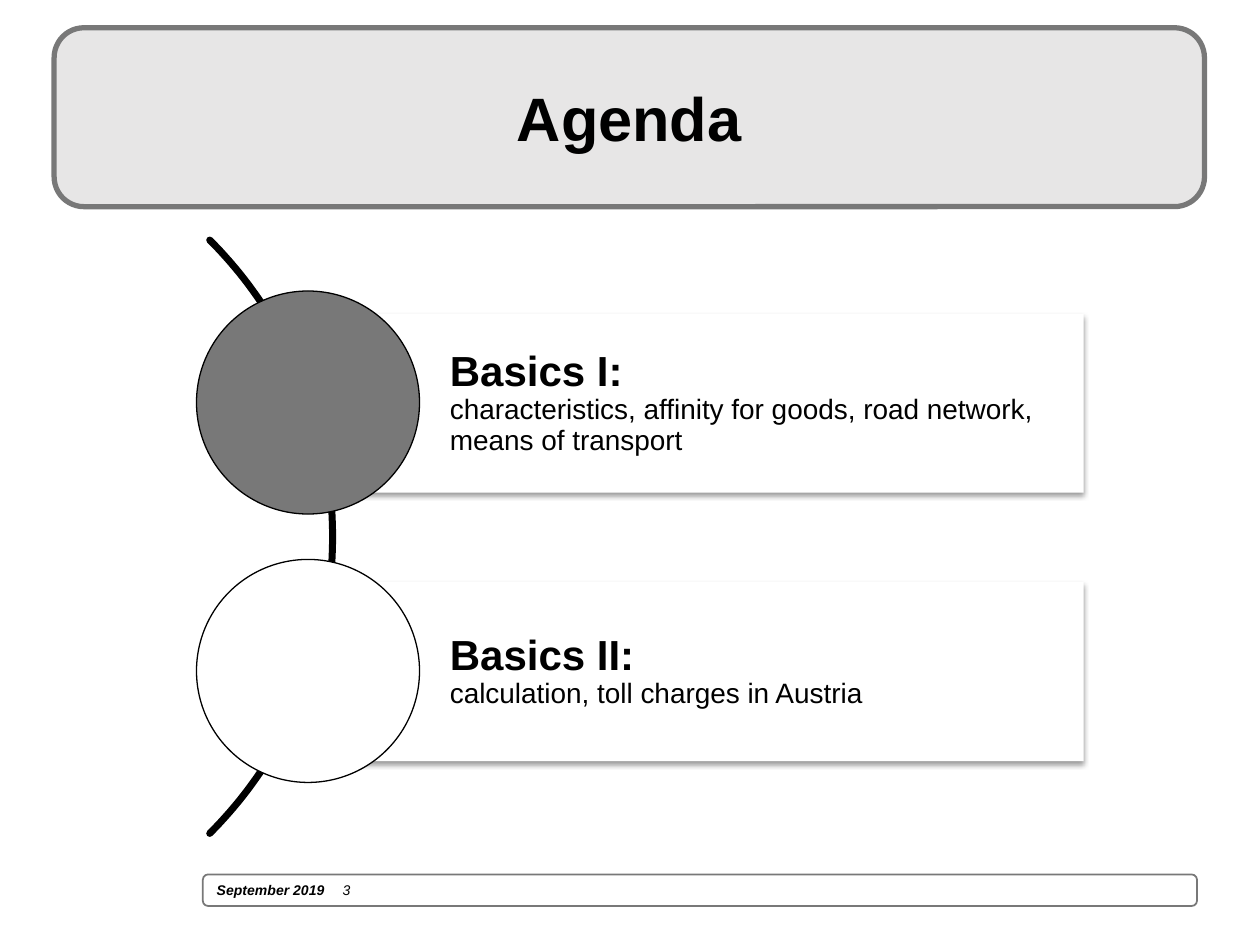
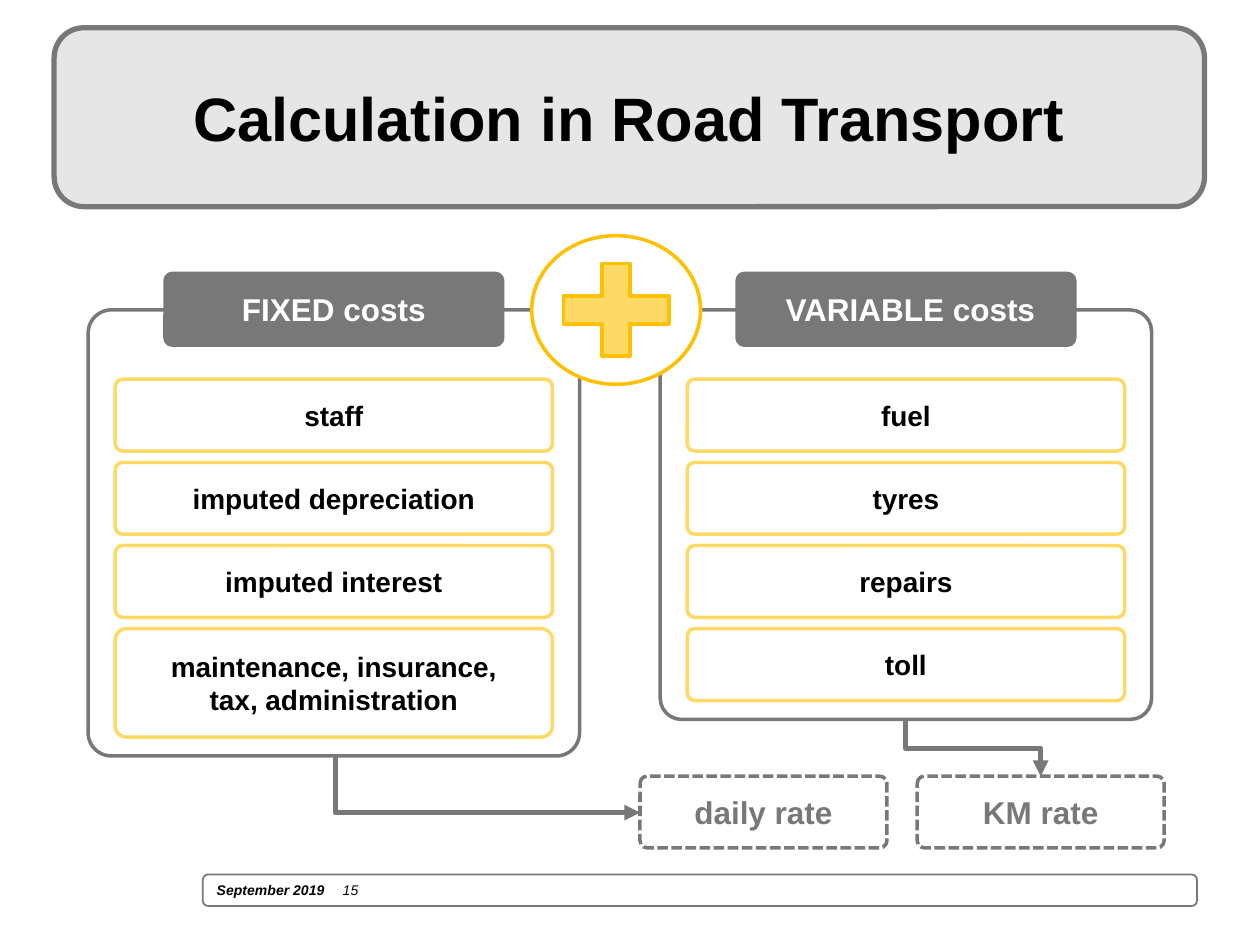
from dataclasses import dataclass
from math import cos, radians, sin

from lxml.etree import SubElement
from pptx import Presentation
from pptx.dml.color import RGBColor
from pptx.enum.dml import MSO_LINE
from pptx.enum.shapes import MSO_CONNECTOR, MSO_SHAPE
from pptx.enum.text import MSO_ANCHOR, PP_ALIGN
from pptx.oxml.ns import qn
from pptx.shapes.autoshape import Shape
from pptx.slide import Slide
from pptx.text.text import _Paragraph as Paragraph
from pptx.util import Inches, Pt


@dataclass(frozen=True)
class Theme:
    font: str = "Arial"
    black: str = "000000"
    white: str = "FFFFFF"
    grey: str = "787878"
    light_grey: str = "E7E6E6"
    yellow: str = "FFD966"
    gold: str = "FFC000"
    title_size: int = 35
    topic_size: int = 24
    label_size: int = 18
    body_size: int = 16
    footer_size: int = 8


THEME = Theme()


@dataclass(frozen=True)
class Frame:
    left: float
    top: float
    width: float
    height: float


@dataclass(frozen=True)
class Topic:
    heading: str
    detail: str
    dot_color: str


@dataclass(frozen=True)
class CostColumn:
    left: float
    height: float
    heading: str
    items: tuple[str, ...]
    last_height: float
    heading_inset: float = 0.1


TOPICS = (
    Topic("Basics I:", "characteristics, affinity for goods, road network, means of transport",
          THEME.grey),
    Topic("Basics II:", "calculation, toll charges in Austria", THEME.white),
)
COLUMNS = (
    CostColumn(0.7, 3.54, "FIXED costs",
               ("staff", "imputed depreciation", "imputed interest",
                "maintenance, insurance,\ntax, administration"), 0.86),
    CostColumn(5.24, 3.25, "VARIABLE costs", ("fuel", "tyres", "repairs", "toll"), 0.57, 0.17),
)
LABEL_HEIGHT = 0.57
LABEL_CORNER = 0.102


# Shared drawing functions
def add_box(page: Slide, kind: MSO_SHAPE, frame: Frame, fill: str = THEME.white,
            line: str | None = None, line_width: float = 2, corner: float | None = None) -> Shape:
    box = page.shapes.add_shape(kind, Inches(frame.left), Inches(frame.top),
                                Inches(frame.width), Inches(frame.height))
    box.shadow.inherit = False
    box.fill.solid()
    box.fill.fore_color.rgb = RGBColor.from_string(fill)
    if line is None:
        box.line.fill.background()
    else:
        box.line.color.rgb = RGBColor.from_string(line)
        box.line.width = Pt(line_width)
    if corner is not None:
        box.adjustments[0] = corner
    return box


def add_span(para: Paragraph, text: str, size: int = THEME.body_size, color: str = THEME.black,
             bold: bool = True, italic: bool = False) -> None:
    span = para.add_run()
    span.text = text
    span.font.name = THEME.font
    span.font.size = Pt(size)
    span.font.bold = bold
    span.font.italic = italic
    span.font.color.rgb = RGBColor.from_string(color)


def write_lines(box: Shape, text: str, align: PP_ALIGN = PP_ALIGN.CENTER, **style) -> None:
    frame = box.text_frame
    frame.word_wrap = True
    frame.vertical_anchor = MSO_ANCHOR.MIDDLE
    for index, line in enumerate(text.split("\n")):
        para = frame.add_paragraph() if index else frame.paragraphs[0]
        para.alignment = align
        add_span(para, line, **style)


def add_label(page: Slide, frame: Frame, text: str, fill: str = THEME.white,
              line: str = THEME.yellow, **style) -> Shape:
    label = add_box(page, MSO_SHAPE.ROUNDED_RECTANGLE, frame, fill, line, corner=LABEL_CORNER)
    write_lines(label, text, **style)
    return label


def add_page(deck: Presentation, title: str, number: int) -> Slide:
    page = deck.slides.add_slide(deck.slide_layouts[6])
    # Footer with the date and page number
    footer = add_box(page, MSO_SHAPE.ROUNDED_RECTANGLE, Frame(1.61, 6.94, 7.89, 0.25),
                     line=THEME.grey, line_width=1)
    para = footer.text_frame.paragraphs[0]
    tabs = SubElement(para._p.get_or_add_pPr(), qn("a:tabLst"))
    SubElement(tabs, qn("a:tab"), pos=str(Inches(1)), algn="l")
    write_lines(footer, "September 2019\t", align=PP_ALIGN.LEFT,
                size=THEME.footer_size, italic=True)
    add_span(para, str(number), size=THEME.footer_size, bold=False, italic=True)
    # Title band
    band = add_box(page, MSO_SHAPE.ROUNDED_RECTANGLE, Frame(0.43, 0.22, 9.13, 1.42),
                   THEME.light_grey, THEME.grey, line_width=3)
    write_lines(band, title, size=THEME.title_size)
    return page


def add_soft_shadow(box: Shape) -> None:
    effects = box.element.spPr.find(qn("a:effectLst"))
    shadow = SubElement(effects, qn("a:outerShdw"), blurRad=str(Pt(3.1)), dist=str(Pt(1.6)),
                        dir="5400000", rotWithShape="0")
    color = SubElement(shadow, qn("a:srgbClr"), val=THEME.black)
    SubElement(color, qn("a:alpha"), val="38000")


def add_arc(page: Slide, center_x: float, center_y: float, radius: float) -> None:
    points = [(Inches(center_x + radius * cos(radians(angle))),
               Inches(center_y + radius * sin(radians(angle)))) for angle in range(-45, 46)]
    builder = page.shapes.build_freeform(*points[0], scale=1.0)
    builder.add_line_segments(points[1:], close=False)
    arc = builder.convert_to_shape()
    arc.shadow.inherit = False
    arc.fill.background()
    arc.line.color.rgb = RGBColor.from_string(THEME.black)
    arc.line.width = Pt(4)
    arc.line._get_or_add_ln().set("cap", "rnd")


def add_down_arrow(page: Slide, start: tuple[float, float], end: tuple[float, float],
                   preset: str) -> None:
    """Draw an elbow arrow that leaves its start downwards."""
    across, down = end[0] - start[0], end[1] - start[1]
    left = (start[0] + end[0] - down) / 2
    top = (start[1] + end[1] - across) / 2
    arrow = page.shapes.add_connector(MSO_CONNECTOR.ELBOW, Inches(left), Inches(top),
                                      Inches(left + down), Inches(top + across))
    arrow.line.color.rgb = RGBColor.from_string(THEME.grey)
    arrow.line.width = Pt(3)
    properties = arrow.element.spPr
    properties.find(qn("a:prstGeom")).set("prst", preset)
    transform = properties.find(qn("a:xfrm"))
    transform.set("rot", "16200000")
    transform.set("flipH", "1")
    SubElement(properties.find(qn("a:ln")), qn("a:tailEnd"), type="triangle")
    SubElement(properties, qn("a:effectLst"))


# Agenda slide
def add_topic(page: Slide, topic: Topic, top: float) -> None:
    panel = add_box(page, MSO_SHAPE.RECTANGLE, Frame(2.45, top, 6.15, 1.42))
    add_soft_shadow(panel)
    write_lines(panel, topic.heading, align=PP_ALIGN.LEFT, size=THEME.topic_size)
    frame = panel.text_frame
    frame.margin_left = Inches(1.12)
    frame.margin_right = frame.margin_top = frame.margin_bottom = Inches(0.07)
    detail = frame.add_paragraph()
    detail.alignment = PP_ALIGN.LEFT
    add_span(detail, topic.detail, bold=False)
    for para in frame.paragraphs:
        para.line_spacing = 0.9
    add_box(page, MSO_SHAPE.OVAL, Frame(1.56, top - 0.18, 1.77, 1.77),
            topic.dot_color, THEME.black, line_width=0.75)


def add_agenda(deck: Presentation) -> None:
    page = add_page(deck, "Agenda", 3)
    add_arc(page, -0.69, 4.26, 3.33)
    for index, topic in enumerate(TOPICS):
        add_topic(page, topic, 2.49 + 2.13 * index)


# Cost calculation slide
def add_cost_column(page: Slide, column: CostColumn) -> None:
    panel_width, heading_width, item_width = 3.9, 2.68, 3.47
    add_box(page, MSO_SHAPE.ROUNDED_RECTANGLE,
            Frame(column.left, 2.46, panel_width, column.height), line=THEME.grey, corner=0.052)
    heading_left = column.left + (panel_width - heading_width) / 2
    heading = add_label(page, Frame(heading_left, 2.17, heading_width, LABEL_HEIGHT),
                        column.heading, THEME.grey, THEME.grey,
                        size=THEME.label_size, color=THEME.white)
    heading.text_frame.margin_left = Inches(column.heading_inset)
    item_left = column.left + (panel_width - item_width) / 2
    last = len(column.items) - 1
    for index, item in enumerate(column.items):
        height = column.last_height if index == last else LABEL_HEIGHT
        add_label(page, Frame(item_left, 3.01 + 0.66 * index, item_width, height), item)


def add_calculation(deck: Presentation) -> None:
    page = add_page(deck, "Calculation in Road Transport", 15)
    for column in COLUMNS:
        add_cost_column(page, column)
    # Plus sign between the columns
    add_box(page, MSO_SHAPE.OVAL, Frame(4.22, 1.87, 1.34, 1.18), line=THEME.gold)
    add_box(page, MSO_SHAPE.MATH_PLUS, Frame(4.32, 1.96, 1.14, 1), THEME.yellow, THEME.gold,
            corner=0.223)
    # Resulting rates
    for left, text in ((5.08, "daily rate"), (7.28, "KM rate")):
        rate = add_label(page, Frame(left, 6.16, 1.96, LABEL_HEIGHT), text, line=THEME.grey,
                         size=THEME.label_size, color=THEME.grey)
        rate.line.dash_style = MSO_LINE.SQUARE_DOT
    add_down_arrow(page, (2.66, 6.01), (5.08, 6.45), "bentConnector2")
    add_down_arrow(page, (7.19, 5.72), (8.26, 6.16), "bentConnector3")


def main() -> None:
    deck = Presentation()
    deck.slide_width, deck.slide_height = Inches(10), Inches(7.5)
    add_agenda(deck)
    add_calculation(deck)
    deck.save("out.pptx")


if __name__ == "__main__":
    main()
